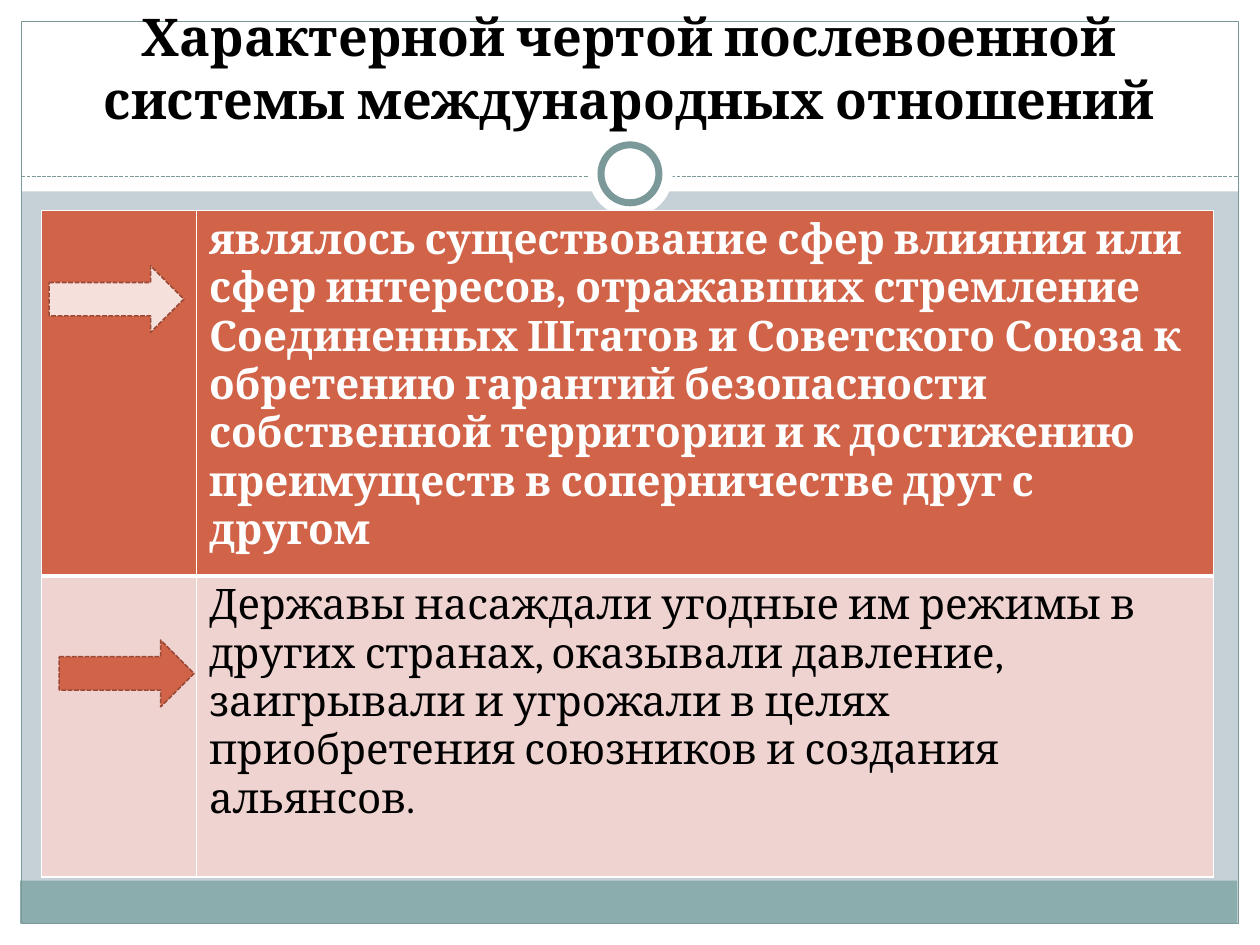
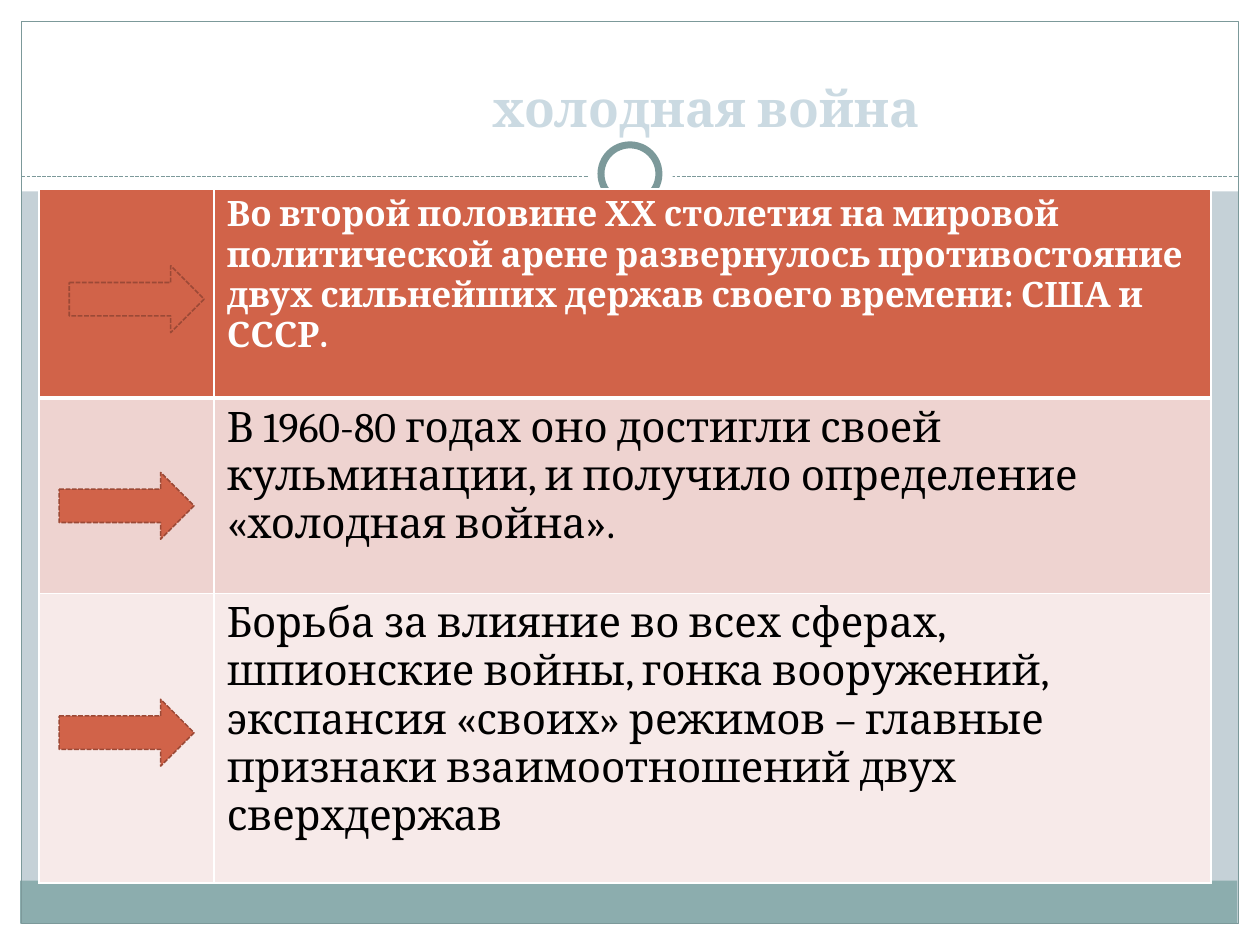
from lxml.etree import SubElement
from pptx import Presentation
from pptx.dml.color import RGBColor
from pptx.enum.dml import MSO_LINE
from pptx.enum.shapes import MSO_CONNECTOR, MSO_SHAPE
from pptx.enum.text import MSO_ANCHOR, PP_ALIGN
from pptx.oxml import parse_xml
from pptx.oxml.ns import nsdecls, qn
from pptx.util import Inches, Pt

FONT = "Cambria"
HUES = {
    "back": "C5D1D7", "white": "FFFFFF", "band": "8CADAE", "frame": "7C999A",
    "black": "000000", "ice": "CBDAE2", "edge": "5B668F", "red": "D16349",
    "pink": "EED3D0", "pale": "F7EAE9", "blush": "F6E0DB", "rust": "9B4936",
}
RGB = {name: RGBColor.from_string(code) for name, code in HUES.items()}


def add_form(slide, kind, box, fill=None, line=None, width=0.75):
    form = slide.shapes.add_shape(kind, *map(Inches, box))
    form.shadow.inherit = False
    if fill:
        form.fill.solid()
        form.fill.fore_color.rgb = RGB[fill]
    else:
        form.fill.background()
    if line:
        form.line.color.rgb = RGB[line]
        form.line.width = Pt(width)
    else:
        form.line.fill.background()
    return form


def add_run(para, text, size, color, bold):
    run = para.add_run()
    run.text = text
    run.font.name = FONT
    run.font.size = Pt(size)
    run.font.bold = bold
    run.font.color.rgb = RGB[color]
    return run


# Shared frame: kind, box, fill, line, line width
RECT, OVAL = MSO_SHAPE.RECTANGLE, MSO_SHAPE.OVAL
BANDS = [
    (RECT, (0, 7.33, 10, 0.17), "white"),
    (RECT, (0, 0, 10, 1.52), "white"),
    (RECT, (0, 0, 0.17, 7.5), "white"),
    (RECT, (9.83, 0, 0.17, 7.5), "white"),
    (RECT, (0.16, 6.99, 9.66, 0.34), "band"),
    (RECT, (0.17, 0.17, 9.66, 7.16), None, "frame"),
]
RINGS = [
    (OVAL, (4.67, 1.05, 0.67, 0.67), "white"),
    (OVAL, (4.77, 1.15, 0.46, 0.46), "white", "frame", 4),
]

# Rows: height, fill, text size, text colour, bold, text
# Arrows: left, top, fill
PAGES = [
    {
        "title": "Характерной чертой послевоенной системы международных отношений",
        "at": (0.33, 0.25), "size": 29.7, "color": "black", "edge": False,
        "table": (0.33, 1.67), "cols": (1.23, 8.07),
        "rows": [
            (2.79, "red", 24, "white", True,
             "являлось существование сфер влияния или сфер интересов, "
             "отражавших стремление Соединенных Штатов и Советского Союза "
             "к обретению гарантий безопасности собственной территории и "
             "к достижению преимуществ в соперничестве друг с другом"),
            (2.39, "pink", 24, "black", False,
             "Державы насаждали угодные им режимы в других странах, "
             "оказывали давление, заигрывали и угрожали в целях "
             "приобретения союзников и создания альянсов."),
        ],
        "arrows": [(0.39, 2.11, "blush"), (0.47, 5.08, "red")],
    },
    {
        "title": "холодная война",
        "at": (0.94, 0.31), "size": 28.8, "color": "ice", "edge": True,
        "table": (0.31, 1.5), "cols": (1.39, 7.91),
        "rows": [
            (1.66, "red", 20, "white", True,
             "Во второй половине ХХ столетия на мировой политической арене "
             "развернулось противостояние двух сильнейших держав своего "
             "времени: США и СССР."),
            (1.55, "pink", 24, "black", False,
             "В 1960-80 годах оно достигли своей кульминации, и получило "
             "определение «холодная война»."),
            (2.3, "pale", 24, "black", False,
             "Борьба за влияние во всех сферах, шпионские войны, гонка "
             "вооружений, экспансия «своих» режимов – главные признаки "
             "взаимоотношений двух сверхдержав"),
        ],
        "arrows": [(0.55, 2.11, "red"), (0.47, 3.75, "red"), (0.47, 5.55, "red")],
    },
]

deck = Presentation()
deck.slide_width, deck.slide_height = Inches(10), Inches(7.5)

for page in PAGES:
    slide = deck.slides.add_slide(deck.slide_layouts[6])
    slide.background.fill.solid()
    slide.background.fill.fore_color.rgb = RGB["back"]

    # Bands, dashed rule and ring
    for band in BANDS:
        add_form(slide, *band)
    rule = slide.shapes.add_connector(
        MSO_CONNECTOR.STRAIGHT, Inches(0.17), Inches(1.4), Inches(9.83), Inches(1.4))
    rule.line.color.rgb = RGB["frame"]
    rule.line.width = Pt(0.75)
    rule.line.dash_style = MSO_LINE.SQUARE_DOT
    SubElement(rule.element.spPr, qn("a:effectLst"))
    for ring in RINGS:
        add_form(slide, *ring)

    # Title
    box = slide.shapes.add_textbox(*map(Inches, (*page["at"], 9.33, 0.83)))
    frame = box.text_frame
    frame.word_wrap = True
    frame.vertical_anchor = MSO_ANCHOR.BOTTOM
    para = frame.paragraphs[0]
    para.alignment = PP_ALIGN.CENTER
    run = add_run(para, page["title"], page["size"], page["color"], True)
    if page["edge"]:
        run.font._element.insert(0, parse_xml(
            f'<a:ln {nsdecls("a")} w="12700"><a:solidFill>'
            f'<a:srgbClr val="{HUES["edge"]}"/></a:solidFill></a:ln>'))

    # Table
    rows, cols = page["rows"], page["cols"]
    high = sum(row[0] for row in rows)
    table = slide.shapes.add_table(
        len(rows), len(cols), *map(Inches, (*page["table"], sum(cols), high))).table
    table.first_row = table.horz_banding = False
    for col, wide in zip(table.columns, cols):
        col.width = Inches(wide)
    for i, (tall, fill, size, color, bold, text) in enumerate(rows):
        table.rows[i].height = Inches(tall)
        for cell in table.rows[i].cells:
            props = cell._tc.get_or_add_tcPr()
            for side in "LRTB":
                thick = 3 if (i, side) in ((0, "B"), (1, "T")) else 1
                props.append(parse_xml(
                    f'<a:ln{side} {nsdecls("a")} w="{Pt(thick)}"><a:solidFill>'
                    f'<a:srgbClr val="{HUES["white"]}"/></a:solidFill></a:ln{side}>'))
            cell.fill.solid()
            cell.fill.fore_color.rgb = RGB[fill]
        para = table.cell(i, 1).text_frame.paragraphs[0]
        add_run(para, text, size, color, bold)

    # Arrows
    for left, top, fill in page["arrows"]:
        arrow = add_form(slide, MSO_SHAPE.RIGHT_ARROW, (left, top, 1.07, 0.53),
                         fill, "rust", 0.9)
        arrow.line.dash_style = MSO_LINE.SQUARE_DOT

deck.save("out.pptx")
